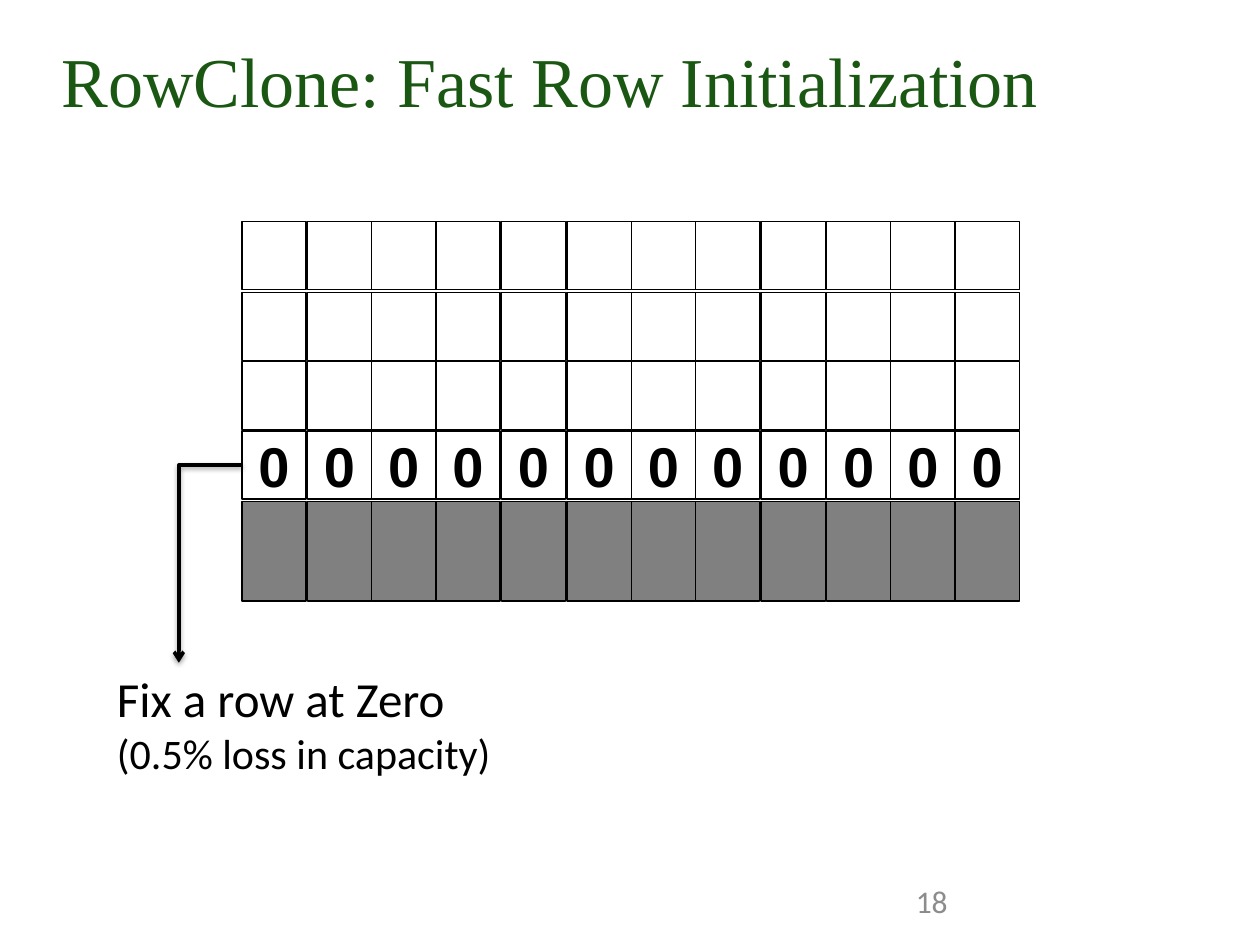
from dataclasses import dataclass
from typing import Optional

from lxml.etree import SubElement
from pptx import Presentation
from pptx.dml.color import RGBColor
from pptx.enum.shapes import MSO_CONNECTOR as Connector, MSO_SHAPE as Preset
from pptx.enum.text import MSO_ANCHOR as Anchor, MSO_AUTO_SIZE as AutoSize, PP_ALIGN as Align
from pptx.oxml.ns import qn
from pptx.util import Emu, Pt

EMU_PER_PX = 9144
COLUMNS = 12
GRID_LEFT, GRID_TOP = 192, 176
COLUMN_PITCH, ROW_PITCH = 51.5, 55.5
CELL_WIDTH = 51
BLACK, WHITE, GRAY = "000000", "FFFFFF", "808080"


@dataclass(frozen=True)
class TextStyle:
    """Look of one run of text."""
    font: str
    size: int
    color: str = BLACK
    bold: Optional[bool] = None


@dataclass(frozen=True)
class MemoryRow:
    """One row of cells in the memory array."""
    fill: str = WHITE
    height: int = 54
    text: str = ""
    grouped: bool = False


TITLE = TextStyle("Times New Roman", 40, "1A5712")
DIGIT = TextStyle("Arial", 32, bold=True)
CAPTION = TextStyle("Calibri", 28)
CAPTION_DETAIL = TextStyle("Calibri", 24)
PAGE_NUMBER = TextStyle("Calibri", 18, "8C8C8C")

ROWS = [
    MemoryRow(),
    MemoryRow(),
    MemoryRow(),
    MemoryRow(text="0"),
    MemoryRow(fill=GRAY, height=79, grouped=True),
]


def px(length: int) -> Emu:
    """Turn whole pixels into EMU."""
    return Emu(length * EMU_PER_PX)


def rgb(color: str) -> RGBColor:
    """Turn a hex string into a colour."""
    return RGBColor.from_string(color)


def add_span(para, text: str, style: TextStyle) -> None:
    """Add one formatted run to a paragraph."""
    span = para.add_run()
    span.text = text
    span.font.name = style.font
    span.font.size = Pt(style.size)
    span.font.bold = style.bold
    span.font.color.rgb = rgb(style.color)


def add_title(page, text: str) -> None:
    """Place and fill the title placeholder."""
    title = page.shapes.title
    title.left, title.top, title.width, title.height = px(46), px(22), px(883), px(61)
    frame = title.text_frame
    frame.auto_size = AutoSize.NONE
    frame.vertical_anchor = Anchor.TOP
    frame.margin_left = frame.margin_right = frame.margin_bottom = px(3)
    frame.margin_top = px(8)
    para = frame.paragraphs[0]
    para.alignment = Align.LEFT
    add_span(para, text, TITLE)


def add_cell(shapes, left: int, top: int, row: MemoryRow) -> None:
    """Draw one memory cell."""
    cell = shapes.add_shape(Preset.RECTANGLE, px(left), px(top), px(CELL_WIDTH), px(row.height))
    cell.shadow.inherit = False
    cell.fill.solid()
    cell.fill.fore_color.rgb = rgb(row.fill)
    cell.line.color.rgb = rgb(BLACK)
    cell.line.width = Pt(0.75)
    if row.text:
        cell.text_frame.vertical_anchor = Anchor.MIDDLE
        para = cell.text_frame.paragraphs[0]
        para.alignment = Align.CENTER
        add_span(para, row.text, DIGIT)


def add_memory(page, rows: list[MemoryRow]) -> None:
    """Draw the memory array row by row."""
    for index, row in enumerate(rows):
        shapes = page.shapes.add_group_shape().shapes if row.grouped else page.shapes
        top = round(GRID_TOP + index * ROW_PITCH)
        for column in range(COLUMNS):
            add_cell(shapes, round(GRID_LEFT + column * COLUMN_PITCH), top, row)


def add_caption(page) -> None:
    """Write the two-line caption under the arrow."""
    box = page.shapes.add_textbox(px(83), px(526), px(319), px(98))
    frame = box.text_frame
    frame.word_wrap = False
    frame.auto_size = AutoSize.SHAPE_TO_FIT_TEXT
    add_span(frame.paragraphs[0], "Fix a row at Zero", CAPTION)
    add_span(frame.add_paragraph(), "(0.5% loss in capacity)", CAPTION_DETAIL)


def add_bent_arrow(page) -> None:
    """Lead from the zero row to its caption with a shadowed bent arrow."""
    arrow = page.shapes.add_connector(Connector.ELBOW, px(GRID_LEFT), px(369), px(142), px(526))
    arrow.line.color.rgb = rgb(BLACK)
    arrow.line.width = Pt(2)
    properties = arrow.element.spPr
    properties.find(qn("a:prstGeom")).set("prst", "bentConnector2")
    SubElement(properties.find(qn("a:ln")), qn("a:tailEnd"), type="arrow")
    effects = SubElement(properties, qn("a:effectLst"))
    shadow = SubElement(effects, qn("a:outerShdw"), blurRad=str(Pt(3.1)), dist=str(Pt(1.6)),
                        dir="5400000", rotWithShape="0")
    color = SubElement(shadow, qn("a:srgbClr"), val=BLACK)
    SubElement(color, qn("a:alpha"), val="38000")


def add_page_number(page, number: str) -> None:
    """Write the page number at the bottom."""
    box = page.shapes.add_textbox(px(717), px(695), px(233), px(40))
    box.text_frame.word_wrap = True
    add_span(box.text_frame.paragraphs[0], number, PAGE_NUMBER)


def main() -> None:
    """Build the slide and save the deck."""
    deck = Presentation()
    deck.slide_width, deck.slide_height = px(1000), px(750)
    page = deck.slides.add_slide(deck.slide_layouts[5])
    add_title(page, "RowClone: Fast Row Initialization")
    add_memory(page, ROWS)
    add_caption(page)
    add_bent_arrow(page)
    add_page_number(page, "18")
    deck.save("out.pptx")


if __name__ == "__main__":
    main()
